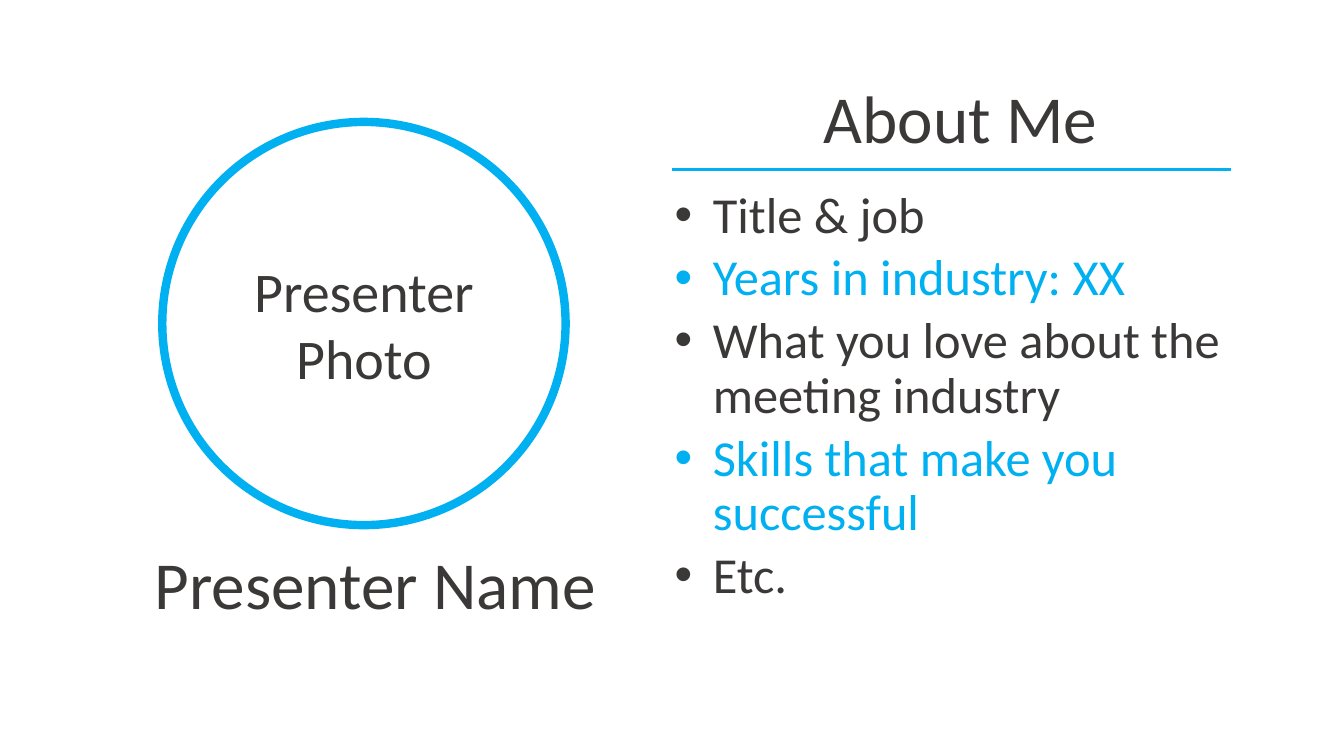
import pptx
import pptx.util
import pptx.dml.color
import pptx.enum.text
import pptx.enum.shapes
import pptx.oxml
import pptx.oxml.ns
from pptx.util import Inches

TITLE = "About Me"
NAME = "Presenter Name"
PHOTO = "Presenter Photo"
FACTS = [
    "Title & job",
    "Years in industry: XX",
    "What you love about the meeting industry",
    "Skills that make you successful",
    "Etc.",
]
THEME = {
    "font": "Calibri",
    "dark": pptx.dml.color.RGBColor.from_string("3B3838"),
    "blue": pptx.dml.color.RGBColor.from_string("00B0F0"),
    "head": 48,
    "photo": 40,
    "fact": 36,
    "ring": 6,
    "rule": 2.25,
}
ALIGN = pptx.enum.text.PP_ALIGN
ANCHOR = pptx.enum.text.MSO_ANCHOR


def place(shape, left, top, width, height):
    shape.left, shape.top = Inches(left), Inches(top)
    shape.width, shape.height = Inches(width), Inches(height)


def style(para, size, color, align, pitch):
    para.alignment = align
    para.line_spacing = pitch
    para.space_before = pptx.util.Pt(0)
    for run in para.runs:
        run.font.name = THEME["font"]
        run.font.size = pptx.util.Pt(size)
        run.font.color.rgb = color


def label(shape, text, size, pitch=0.9):
    frame = shape.text_frame
    frame.text = text
    frame.word_wrap = True
    frame.auto_size = pptx.enum.text.MSO_AUTO_SIZE.NONE
    frame.vertical_anchor = ANCHOR.MIDDLE
    style(frame.paragraphs[0], size, THEME["dark"], ALIGN.CENTER, pitch)


def bullet(para, indent):
    props = para._p.get_or_add_pPr()
    props.set("marL", str(indent))
    props.set("indent", str(-indent))
    for tag, key, value in (("buFont", "typeface", "Arial"), ("buChar", "char", "•")):
        mark = pptx.oxml.parse_xml(f"<a:{tag} {pptx.oxml.ns.nsdecls('a')}/>")
        mark.set(key, value)
        props.append(mark)


def listing(shape, facts):
    frame = shape.text_frame
    frame.text = "\n".join(facts)
    frame.word_wrap = True
    frame.auto_size = pptx.enum.text.MSO_AUTO_SIZE.NONE
    frame.vertical_anchor = ANCHOR.TOP
    colors = THEME["dark"], THEME["blue"]
    for i, para in enumerate(frame.paragraphs):
        bullet(para, Inches(0.38))
        style(para, THEME["fact"], colors[i % 2], ALIGN.LEFT, 0.9)
        para.space_after = pptx.util.Pt(6)


def main():
    deck = pptx.Presentation()
    deck.slide_width, deck.slide_height = Inches(13.33), Inches(7.5)
    slide = deck.slides.add_slide(deck.slide_layouts[1])
    shapes = slide.shapes

    title, body = shapes.title, slide.placeholders[1]
    place(title, 6.73, 0.74, 5.59, 0.94)
    label(title, TITLE, THEME["head"])
    place(body, 6.59, 1.83, 5.62, 5.13)
    listing(body, FACTS)

    name = shapes.add_textbox(Inches(1.36), Inches(5.36), Inches(4.73), Inches(0.94))
    label(name, NAME, THEME["head"])

    oval = pptx.enum.shapes.MSO_SHAPE.OVAL
    ring = shapes.add_shape(oval, Inches(1.61), Inches(1.21), Inches(4), Inches(4))
    ring.shadow.inherit = False
    ring.fill.background()
    ring.line.color.rgb = THEME["blue"]
    ring.line.width = pptx.util.Pt(THEME["ring"])
    label(ring, PHOTO, THEME["photo"], 1)

    kind = pptx.enum.shapes.MSO_CONNECTOR.STRAIGHT
    rule = shapes.add_connector(kind, Inches(6.67), Inches(1.68), Inches(12.21), Inches(1.68))
    rule.line.color.rgb = THEME["blue"]
    rule.line.width = pptx.util.Pt(THEME["rule"])
    flat = pptx.oxml.parse_xml(f"<a:effectLst {pptx.oxml.ns.nsdecls('a')}/>")
    rule._element.spPr.append(flat)

    deck.save("out.pptx")


if __name__ == "__main__":
    main()
